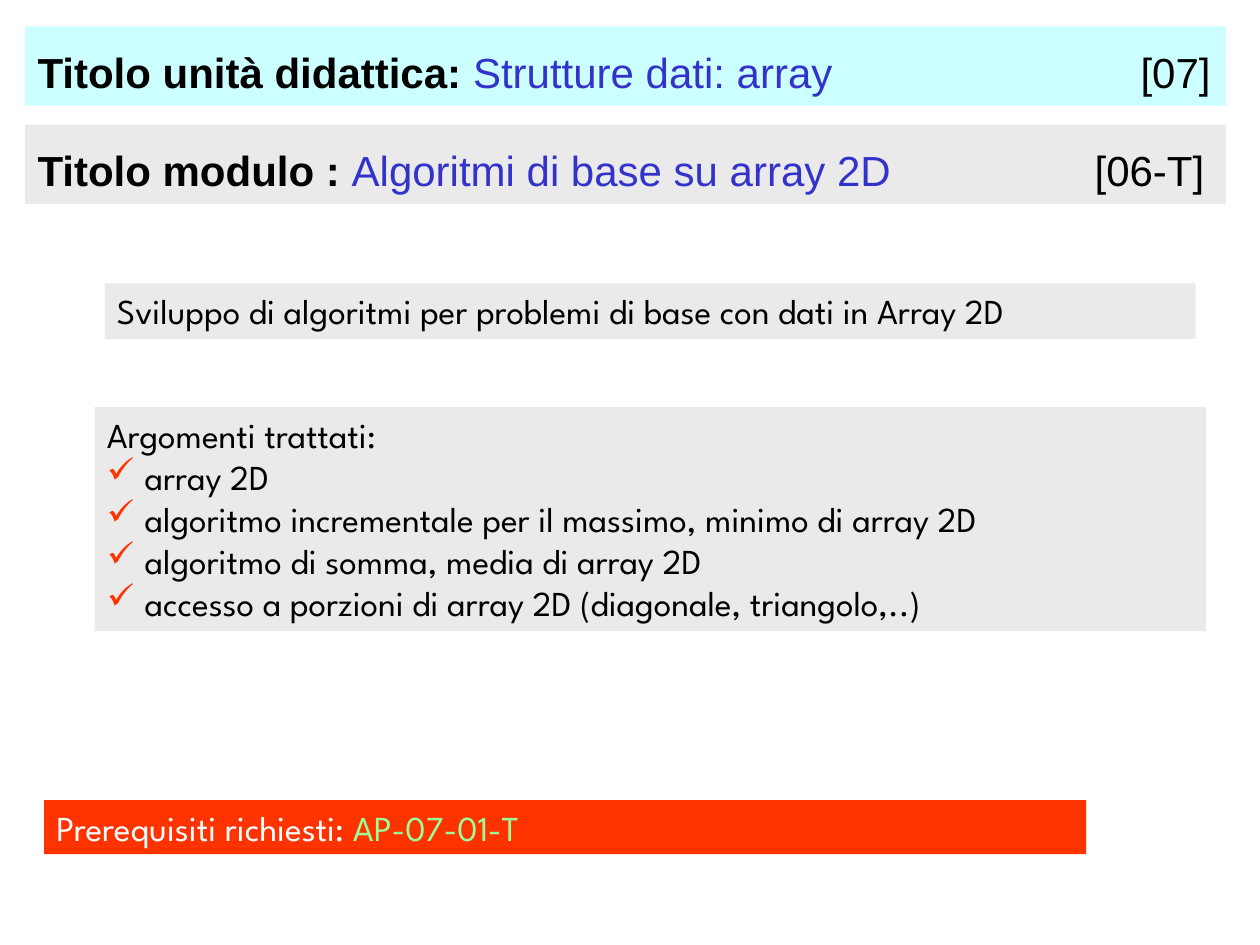
from pptx import Presentation, util as u
from pptx.dml.color import RGBColor
from pptx.enum import shapes, text
from pptx.oxml import parse_xml
from pptx.oxml.ns import nsdecls

BLACK, WHITE, BLUE = "000000", "FFFFFF", "3333CC"
GREY, CYAN, RED, GREEN = "EAEAEA", "CCFFFF", "FF3300", "99FF99"
TITLE_FONT, BODY_FONT = "Arial", "League Spartan"
TOPICS = [
    "array 2D",
    "algoritmo incrementale per il massimo, minimo di array 2D",
    "algoritmo di somma, media di array 2D",
    "accesso a porzioni di array 2D (diagonale, triangolo,..)",
]


def rgb(value):
    """Turn a hex string into a colour."""
    return RGBColor.from_string(value)


def add_panel(s, box, fill):
    """Add a filled rectangle and return its text frame."""
    sp = s.shapes.add_shape(shapes.MSO_SHAPE.RECTANGLE, *map(u.Inches, box))
    sp.shadow.inherit = False
    sp.fill.solid()
    sp.fill.fore_color.rgb = rgb(fill)
    sp.line.fill.background()
    tf = sp.text_frame
    tf.word_wrap = True
    tf.vertical_anchor = text.MSO_ANCHOR.TOP
    tf.paragraphs[0].alignment = text.PP_ALIGN.LEFT
    return tf


def add_run(p, words, font, size, color, bold=False):
    """Append a formatted run to a paragraph."""
    r = p.add_run()
    r.text = words
    r.font.name = font
    r.font.size = u.Pt(size)
    r.font.bold = bold
    r.font.color.rgb = rgb(color)


def add_ppr(p, tag, content):
    """Append a DrawingML element to the paragraph properties."""
    xml = f"<a:{tag} {nsdecls('a')} {content}"
    p._p.get_or_add_pPr().append(parse_xml(xml))


def add_heading(s, box, fill, label, title, code, code_end):
    """Draw a title bar with its code aligned to a right tab stop."""
    tf = add_panel(s, box, fill)
    tf.vertical_anchor = text.MSO_ANCHOR.BOTTOM
    tf.margin_bottom = u.Inches(0.07)
    p = tf.paragraphs[0]
    add_run(p, label, TITLE_FONT, 24, BLACK, True)
    add_run(p, title + "\t", TITLE_FONT, 24, BLUE)
    add_run(p, code, TITLE_FONT, 24, BLACK)
    stop = u.Inches(code_end - box[0]) - tf.margin_left
    add_ppr(p, "tabLst", f'><a:tab pos="{stop}" algn="r"/></a:tabLst>')


def add_line(s, box, fill, parts):
    """Draw a panel with one line of coloured parts."""
    p = add_panel(s, box, fill).paragraphs[0]
    for words, color in parts:
        add_run(p, words, BODY_FONT, 20, color)


def add_topics(s, box, fill, title, topics):
    """Draw a panel with a lead line and a ticked list."""
    tf = add_panel(s, box, fill)
    add_run(tf.paragraphs[0], title, BODY_FONT, 20, BLACK)
    for topic in topics:
        p = tf.add_paragraph()
        p.alignment = text.PP_ALIGN.LEFT
        add_run(p, topic, BODY_FONT, 20, BLACK)
        indent = u.Inches(0.3)
        ppr = p._p.get_or_add_pPr()
        ppr.set("marL", str(indent))
        ppr.set("indent", str(-indent))
        add_ppr(p, "buClr", f'><a:srgbClr val="{RED}"/></a:buClr>')
        add_ppr(p, "buChar", 'char="✓"/>')


def main():
    """Build the module cover slide."""
    prs = Presentation()
    prs.slide_width, prs.slide_height = u.Inches(10), u.Inches(7.5)
    s = prs.slides.add_slide(prs.slide_layouts[6])
    add_heading(s, (0.2, 0.21, 9.53, 0.63), CYAN, "Titolo unità didattica: ",
                "Strutture dati: array", "[07]", 9.61)
    add_heading(s, (0.2, 0.99, 9.53, 0.63), GREY, "Titolo modulo : ",
                "Algoritmi di base su array 2D", "[06-T]", 9.56)
    add_line(s, (0.83, 2.25, 8.66, 0.44), GREY,
             [("Sviluppo di algoritmi per problemi di base con dati in Array 2D", BLACK)])
    add_topics(s, (0.75, 3.23, 8.82, 1.78), GREY, "Argomenti trattati:", TOPICS)
    add_line(s, (0.35, 6.35, 8.27, 0.43), RED,
             [("Prerequisiti richiesti: ", WHITE), ("AP-07-01-T", GREEN)])
    prs.save("out.pptx")


if __name__ == "__main__":
    main()
